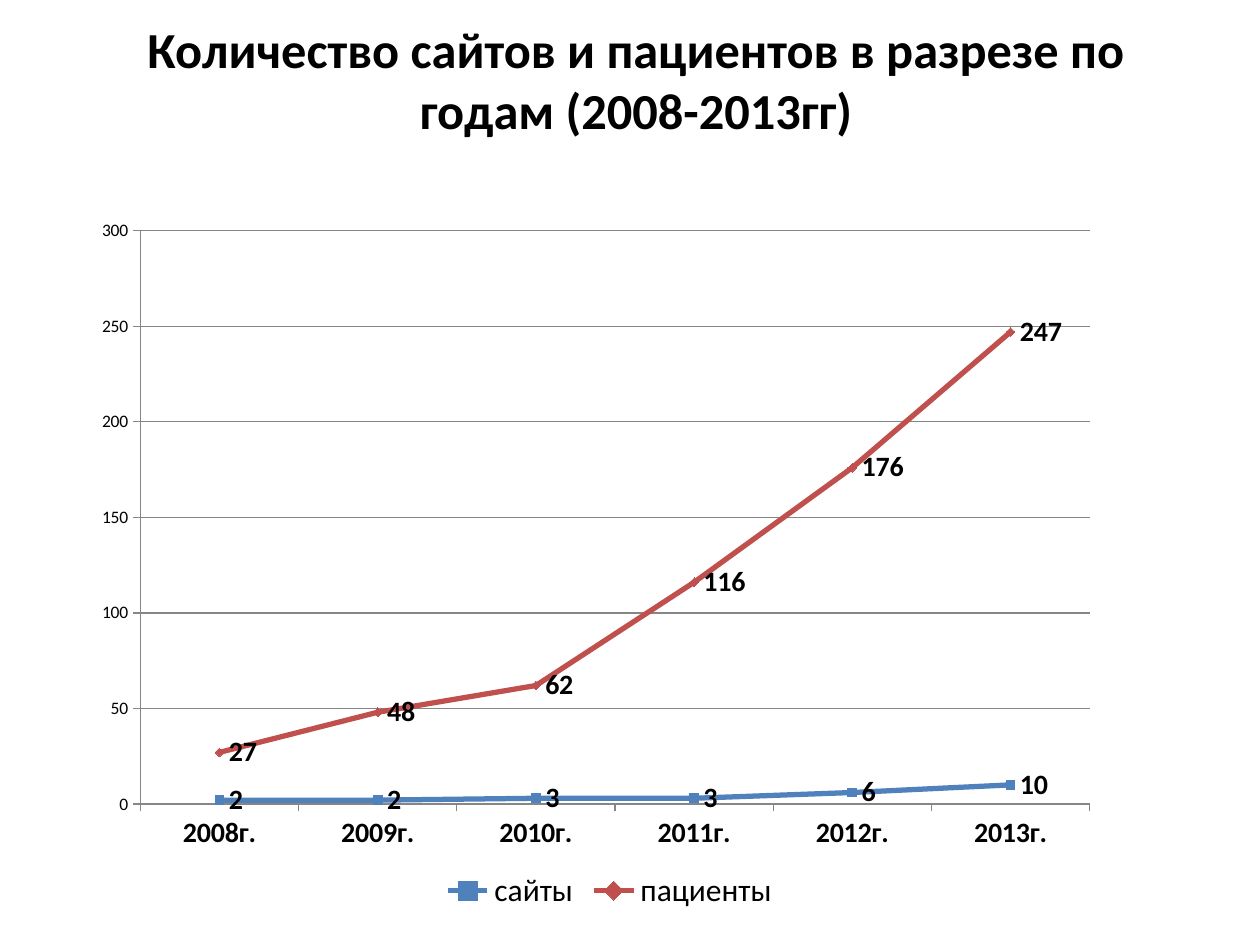
from dataclasses import dataclass

from lxml import etree
from pptx import Presentation
from pptx.chart.data import CategoryChartData
from pptx.dml.color import RGBColor
from pptx.enum.chart import (XL_CHART_TYPE, XL_LABEL_POSITION,
                             XL_LEGEND_POSITION, XL_MARKER_STYLE, XL_TICK_MARK)
from pptx.enum.text import MSO_ANCHOR, PP_ALIGN
from pptx.oxml.ns import qn
from pptx.util import Inches, Pt

LINE_MARKERS = XL_CHART_TYPE.LINE_MARKERS
RIGHT = XL_LABEL_POSITION.RIGHT
BOTTOM = XL_LEGEND_POSITION.BOTTOM
SQUARE, DIAMOND = XL_MARKER_STYLE.SQUARE, XL_MARKER_STYLE.DIAMOND
OUTSIDE = XL_TICK_MARK.OUTSIDE
MIDDLE, CENTER = MSO_ANCHOR.MIDDLE, PP_ALIGN.CENTER


@dataclass(frozen=True)
class Theme:
    font: str = "Calibri"
    text: RGBColor = RGBColor(0x00, 0x00, 0x00)
    grid: RGBColor = RGBColor(0x86, 0x86, 0x86)
    sites: RGBColor = RGBColor(0x4F, 0x81, 0xBD)
    patients: RGBColor = RGBColor(0xC0, 0x50, 0x4D)
    title_size: float = 28.8
    legend_size: float = 18
    label_size: float = 16
    axis_size: float = 10


class SlideBuilder:
    def __init__(self, slide, theme):
        self.slide = slide
        self.theme = theme

    def style_font(self, font, size, bold=False):
        font.name = self.theme.font
        font.size = Pt(size)
        font.bold = bold
        font.color.rgb = self.theme.text

    def title(self, text, left, top, width, height):
        frame = self.slide.shapes.add_textbox(
            Inches(left), Inches(top), Inches(width), Inches(height)).text_frame
        frame.word_wrap = True
        frame.vertical_anchor = MIDDLE
        heading = frame.paragraphs[0]
        heading.text = text
        heading.alignment = CENTER
        self.style_font(heading.font, self.theme.title_size, bold=True)

    def line_chart(self, years, series, plot_area, left, top, width, height):
        data = CategoryChartData()
        data.categories = years
        for name, values, _, _ in series:
            data.add_series(name, values)
        chart = self.slide.shapes.add_chart(
            LINE_MARKERS, Inches(left), Inches(top), Inches(width),
            Inches(height), data).chart
        chart.has_title = False
        self.style_font(chart.font, self.theme.axis_size)
        chart.plots[0].vary_by_categories = False
        for line, (_, _, color, marker) in zip(chart.plots[0].series, series):
            self.style_series(line, color, marker)
        self.style_axes(chart)

        chart.has_legend = True
        chart.legend.position = BOTTOM
        chart.legend.include_in_layout = False
        self.style_font(chart.legend.font, self.theme.legend_size)
        self.place_plot(chart, plot_area)

    def style_series(self, line, color, marker):
        line.smooth = False
        line.format.line.color.rgb = color
        line.format.line.width = Pt(3)
        line.marker.style = marker
        line.marker.size = 5
        line.marker.format.fill.solid()
        line.marker.format.fill.fore_color.rgb = color
        line.marker.format.line.color.rgb = color
        labels = line.data_labels
        labels.show_value = True
        labels.position = RIGHT
        self.style_font(labels.font, self.theme.label_size, bold=True)

    def style_axes(self, chart):
        years, counts = chart.category_axis, chart.value_axis
        for axis in (years, counts):
            axis.major_tick_mark = OUTSIDE
            axis.format.line.color.rgb = self.theme.grid
        self.style_font(years.tick_labels.font, self.theme.label_size, bold=True)
        self.style_font(counts.tick_labels.font, self.theme.axis_size)
        counts.minimum_scale, counts.maximum_scale = 0, 300
        counts.major_unit = 50
        counts.has_major_gridlines = True
        counts.major_gridlines.format.line.color.rgb = self.theme.grid

    def place_plot(self, chart, plot_area):
        """Fix the inner plot area as fractions of the chart: x, y, w, h."""
        plot = chart.element.find(".//" + qn("c:plotArea"))
        for automatic in plot.findall(qn("c:layout")):
            plot.remove(automatic)
        layout = etree.Element(qn("c:layout"))
        manual = etree.SubElement(layout, qn("c:manualLayout"))
        settings = [("layoutTarget", "inner"), ("xMode", "edge"), ("yMode", "edge")]
        for tag, value in settings + list(zip("xywh", plot_area)):
            etree.SubElement(manual, qn("c:" + tag), val=str(value))
        plot.insert(0, layout)


def main():
    presentation = Presentation()
    presentation.slide_width, presentation.slide_height = Inches(10), Inches(7.5)
    theme = Theme()
    blank = presentation.slide_layouts[6]
    builder = SlideBuilder(presentation.slides.add_slide(blank), theme)

    # Heading
    builder.title("Количество сайтов и пациентов в разрезе по годам (2008-2013гг)",
                  0.55, 0.23, 9, 0.79)

    # Sites and patients by year
    years = [f"{year}г." for year in range(2008, 2014)]
    series = [
        ("сайты", (2, 2, 3, 3, 6, 10), theme.sites, SQUARE),
        ("пациенты", (27, 48, 62, 116, 176, 247), theme.patients, DIAMOND),
    ]
    builder.line_chart(years, series, (0.05, 0.02, 0.91, 0.82),
                       0.7, 1.72, 8.28, 5.55)

    presentation.save("out.pptx")


if __name__ == "__main__":
    main()
